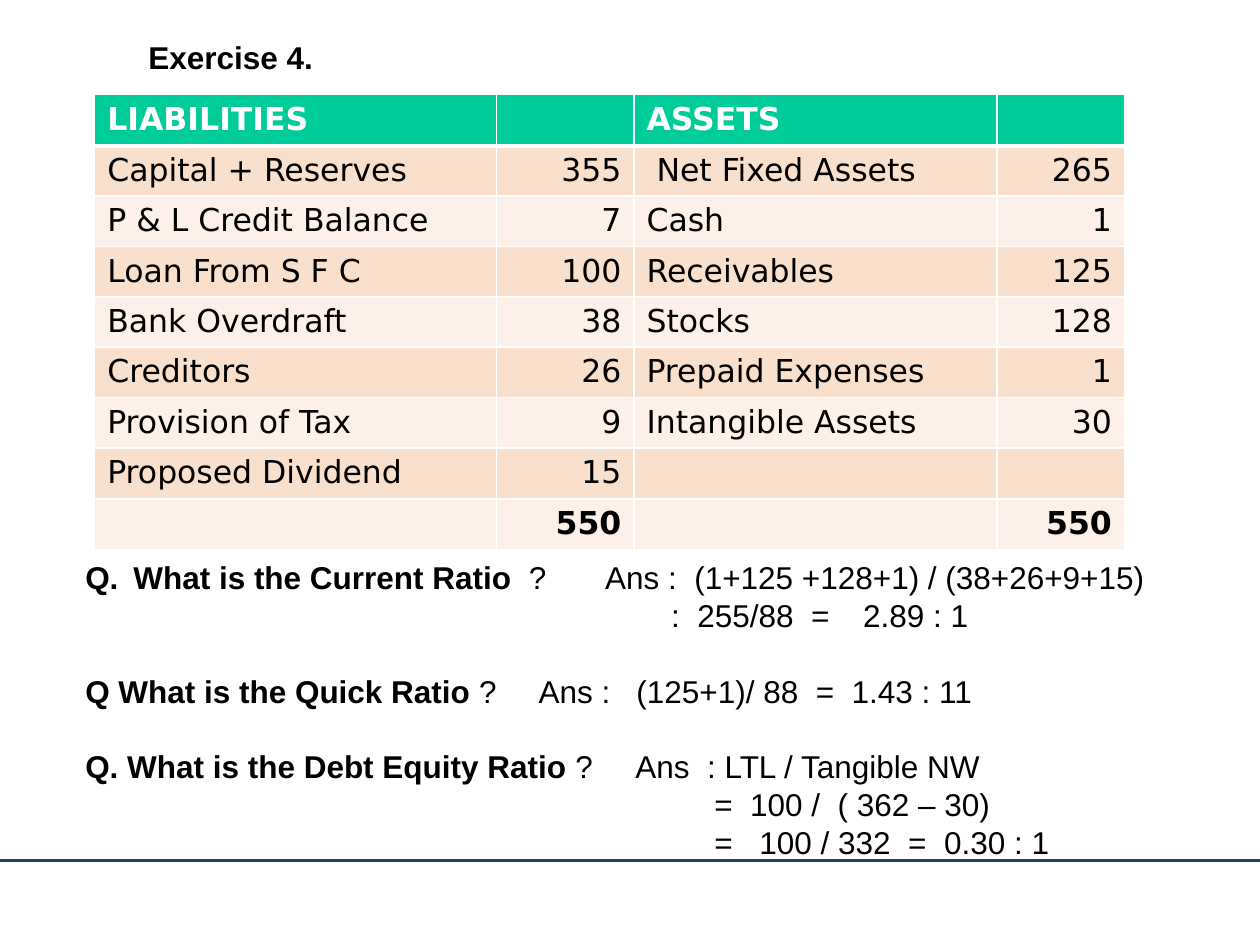
from lxml.etree import SubElement
from pptx import Presentation
from pptx.dml.color import RGBColor as RGB
from pptx.enum.shapes import MSO_CONNECTOR as CONNECTOR
from pptx.enum.text import PP_ALIGN as ALIGN
from pptx.oxml.ns import qn
from pptx.util import Cm, Pt

COLORS = {
    "head": "00CC99", "odd": "F9E0CD", "even": "FCF0E8",
    "white": "FFFFFF", "text": "000000", "rule": "174174",
}
TABLE_FONT, TEXT_FONT = "DejaVu Sans", "Arial"
SIZE, LEADING = Pt(18), Pt(21.6)

COL_WIDTHS = [8.1, 2.77, 7.32, 2.57]
BALANCE_SHEET = [
    ("LIABILITIES", "", "ASSETS", ""),
    ("Capital + Reserves", "355", " Net Fixed Assets", "265"),
    ("P & L Credit Balance", "7", "Cash", "1"),
    ("Loan From S F C", "100", "Receivables", "125"),
    ("Bank Overdraft", "38", "Stocks", "128"),
    ("Creditors", "26", "Prepaid Expenses", "1"),
    ("Provision of Tax", "9", "Intangible Assets", "30"),
    ("Proposed Dividend", "15", "", ""),
    ("", "550", "", "550"),
]

# question, answer, tab stops in cm, starts a new block
ANSWERS = [
    ("Q.\tWhat is the Current Ratio  ", "?\tAns :  (1+125 +128+1) / (38+26+9+15)", [0.97, 10.48], False),
    ("", "\t:  255/88  =\t2.89 : 1", [11.81, 15.68], False),
    ("Q What is the Quick Ratio ", "?\tAns :\t(125+1)/ 88  =  1.43 : 11", [9.14, 11.11], True),
    ("Q. What is the Debt Equity Ratio ", "?\tAns  : LTL / Tangible NW", [11.09], True),
    ("", "\t=  100 /  ( 362 – 30)", [12.68], False),
    ("", "\t=\t100 / 332  =  0.30 : 1", [12.68, 13.59], False),
]


def color(name):
    return RGB.from_string(COLORS[name])


def add_run(p, text, font, bold=False, ink="text"):
    r = p.add_run()
    r.text = text
    r.font.name, r.font.size, r.font.bold = font, SIZE, bold
    r.font.color.rgb = color(ink)


def add_text_box(s, left, top, width, height):
    tf = s.shapes.add_textbox(Cm(left), Cm(top), Cm(width), Cm(height)).text_frame
    tf.word_wrap = True
    return tf


def set_tabs(p, stops):
    tabs = SubElement(p._p.get_or_add_pPr(), qn("a:tabLst"))
    for stop in stops:
        SubElement(tabs, qn("a:tab"), pos=str(Cm(stop)), algn="l")


def set_borders(cell, widths):
    tc_pr = cell._tc.get_or_add_tcPr()
    for side, width in widths.items():
        ln = SubElement(tc_pr, qn(f"a:ln{side}"), w=str(Pt(width)))
        fill = SubElement(ln, qn("a:solidFill"))
        SubElement(fill, qn("a:srgbClr"), val=COLORS["white"])


def add_rule(s):
    line = s.shapes.add_connector(CONNECTOR.STRAIGHT, 0, Cm(17.35), Cm(25.4), Cm(17.35))
    line.line.color.rgb = color("rule")
    line.line.width = Pt(2)
    SubElement(line._element.spPr, qn("a:effectLst"))


def add_balance_sheet(s):
    table = s.shapes.add_table(
        len(BALANCE_SHEET), len(COL_WIDTHS), Cm(1.91), Cm(1.91), Cm(sum(COL_WIDTHS)), Cm(9.14)
    ).table
    for col, width in zip(table.columns, COL_WIDTHS):
        col.width = Cm(width)
    last = len(BALANCE_SHEET) - 1
    for i, row in enumerate(BALANCE_SHEET):
        fill = "head" if i == 0 else "odd" if i % 2 else "even"
        for j, text in enumerate(row):
            cell = table.cell(i, j)
            set_borders(cell, {"L": 1, "R": 1, "T": 3 if i == 1 else 1, "B": 3 if i == 0 else 1})
            cell.fill.solid()
            cell.fill.fore_color.rgb = color(fill)
            p = cell.text_frame.paragraphs[0]
            p.alignment = ALIGN.RIGHT if j % 2 else ALIGN.LEFT
            if text:
                add_run(p, text, TABLE_FONT, i in (0, last), "text" if i else "white")


def add_answers(s):
    tf = add_text_box(s, 1.47, 11.13, 23.06, 7.87)
    for i, (question, answer, stops, new_block) in enumerate(ANSWERS):
        p = tf.add_paragraph() if i else tf.paragraphs[0]
        p.line_spacing = LEADING
        p.space_before = LEADING if new_block else Pt(0)
        set_tabs(p, stops)
        if question:
            add_run(p, question, TEXT_FONT, True)
        add_run(p, answer, TEXT_FONT)


def add_title(s):
    p = add_text_box(s, 2.74, 0.64, 9.32, 1.02).paragraphs[0]
    p.line_spacing = LEADING
    add_run(p, "Exercise 4.", TEXT_FONT, True)


def main():
    prs = Presentation()
    prs.slide_width, prs.slide_height = Cm(25.4), Cm(19.05)
    s = prs.slides.add_slide(prs.slide_layouts[6])
    add_rule(s)
    add_balance_sheet(s)
    add_answers(s)
    add_title(s)
    prs.save("out.pptx")


if __name__ == "__main__":
    main()
